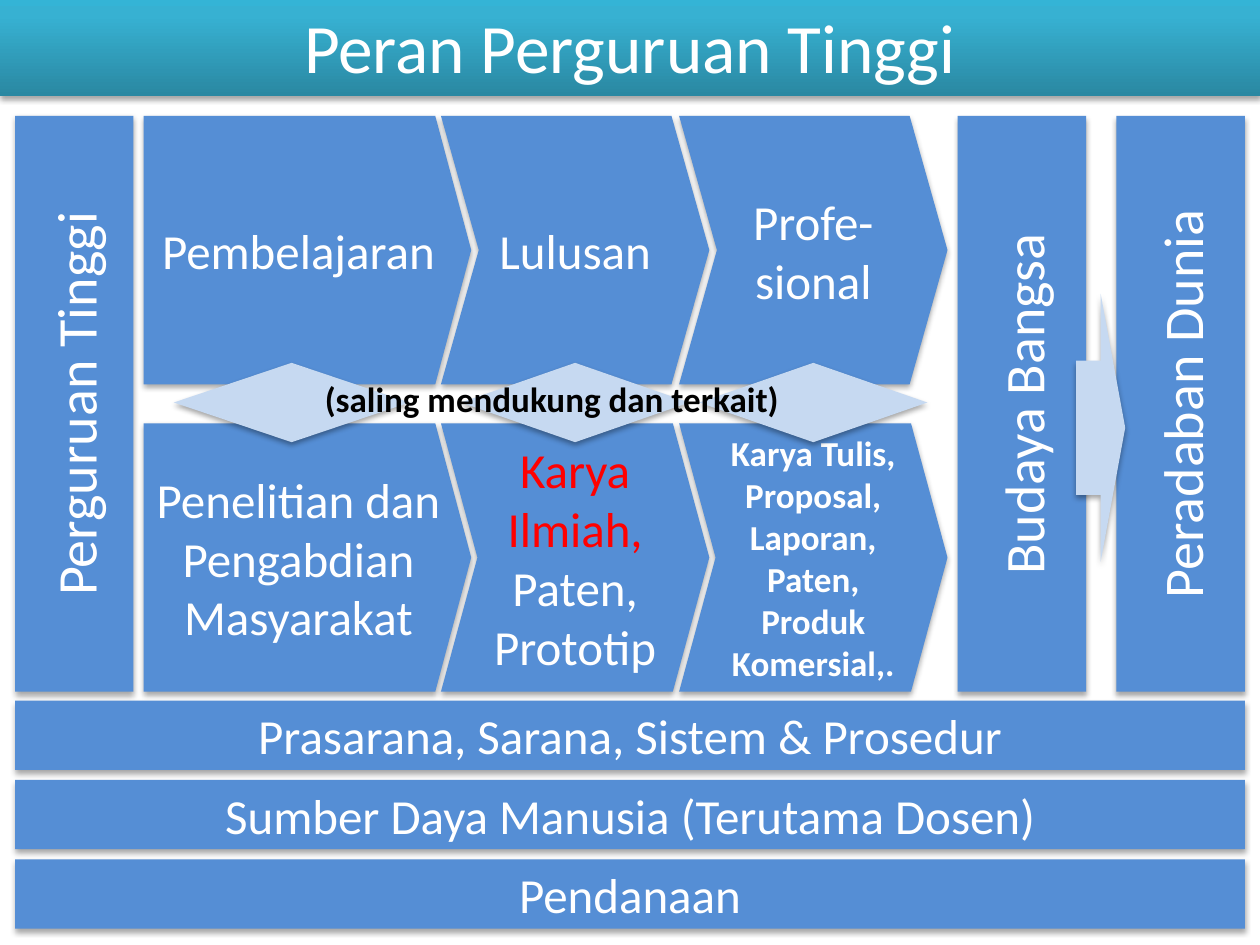
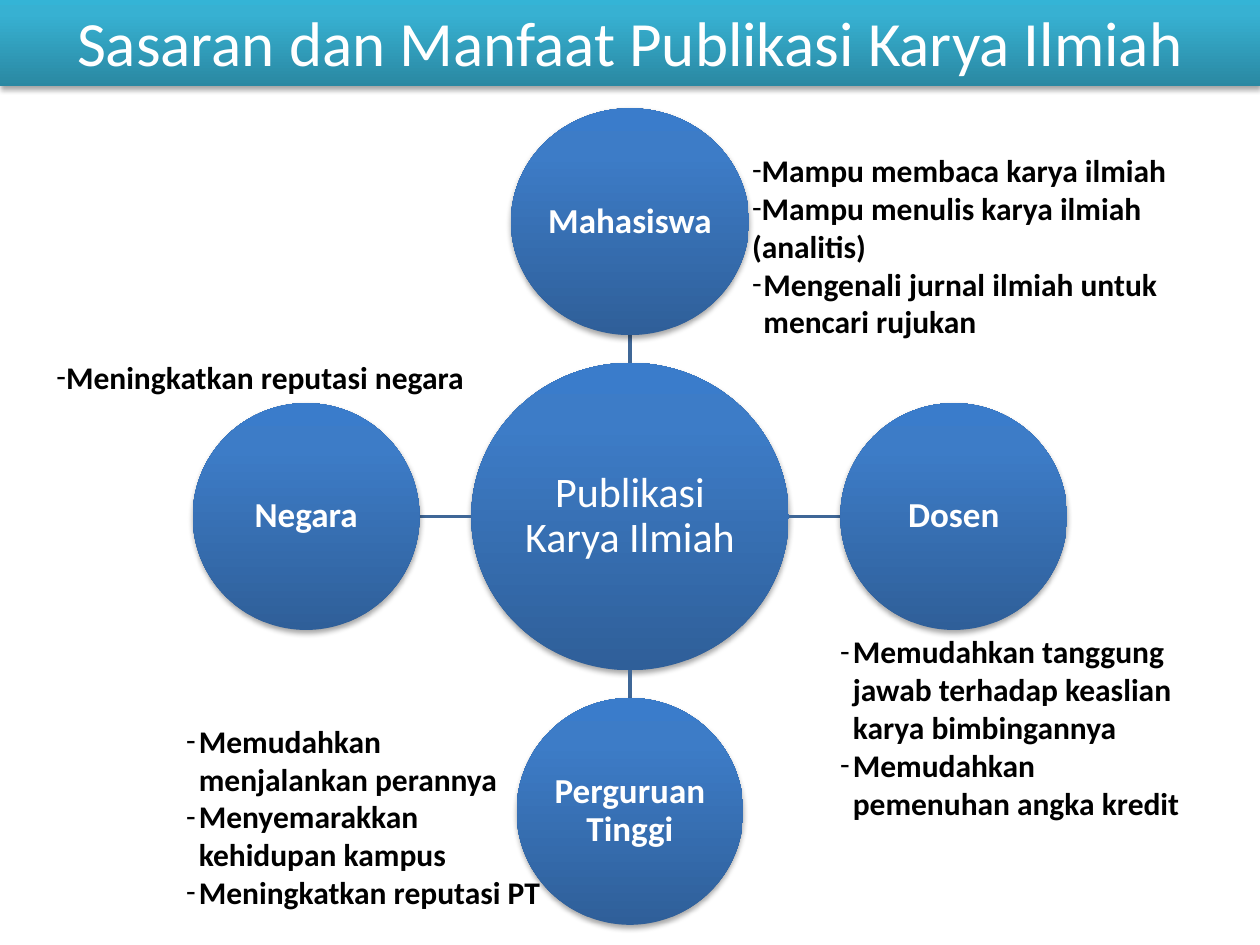
import copy

import lxml.etree
import pptx
import pptx.dml.color
import pptx.enum.shapes
import pptx.enum.text
import pptx.oxml
import pptx.oxml.ns
import pptx.util

Inches = pptx.util.Inches
Pt = pptx.util.Pt
RGBColor = pptx.dml.color.RGBColor
SHAPE = pptx.enum.shapes.MSO_SHAPE
ALIGN = pptx.enum.text.PP_ALIGN
ANCHOR = pptx.enum.text.MSO_ANCHOR
qn = pptx.oxml.ns.qn

WHITE = RGBColor(0xFF, 0xFF, 0xFF)
BLACK = RGBColor(0x00, 0x00, 0x00)
RED = RGBColor(0xFF, 0x00, 0x00)
BLOCK = RGBColor(0x55, 0x8E, 0xD5)
ARROW = RGBColor(0xC6, 0xD9, 0xF1)
SPOKE = RGBColor(0x3F, 0x67, 0x97)
TITLE_GRADIENT = [RGBColor(0x2A, 0x88, 0xA2), RGBColor(0x37, 0xB1, 0xD2), RGBColor(0x34, 0xB4, 0xD6)]
CIRCLE_GRADIENT = [RGBColor(0x2F, 0x5F, 0x99), RGBColor(0x3D, 0x7C, 0xC7), RGBColor(0x3A, 0x7C, 0xCB)]
FONT = "Calibri"
SHADOW = (
    '<a:effectLst xmlns:a="http://schemas.openxmlformats.org/drawingml/2006/main">'
    '<a:outerShdw blurRad="40000" dist="23000" dir="5400000" rotWithShape="0">'
    '<a:srgbClr val="000000"><a:alpha val="35000"/></a:srgbClr>'
    '</a:outerShdw></a:effectLst>'
)


def write(sp, *lines, size=28, color=WHITE, bold=False, align=ALIGN.CENTER, anchor=ANCHOR.MIDDLE,
          lead="", spacing=None, inset=None, vertical=False, wrap=True, hangs=()):
    tf = sp.text_frame
    tf.word_wrap = wrap
    tf.vertical_anchor = anchor
    if inset is not None:
        tf.margin_left = tf.margin_right = tf.margin_top = tf.margin_bottom = Inches(inset)
    if vertical:
        sp._element.txBody.bodyPr.set("vert", "vert270")
    for i, line in enumerate(lines):
        p = tf.paragraphs[0] if i == 0 else tf.add_paragraph()
        p.alignment = align
        if spacing:
            p.line_spacing = spacing
        for part, part_color in ((lead, RED), (line, color)):
            if part:
                r = p.add_run()
                r.text = part
                r.font.name = FONT
                r.font.size = Pt(size)
                r.font.bold = bold
                r.font.color.rgb = part_color
        if hangs:
            pPr = p._p.get_or_add_pPr()
            pPr.set("marL", str(Inches(hangs[i])))
            pPr.set("indent", str(-Inches(hangs[i])))
            lxml.etree.SubElement(pPr, qn("a:buFont")).set("typeface", FONT)
            lxml.etree.SubElement(pPr, qn("a:buChar")).set("char", "-")


def add_block(s, kind, x, y, w, h, fill=BLOCK, adj=()):
    sp = s.shapes.add_shape(kind, Inches(x), Inches(y), Inches(w), Inches(h))
    for i, value in enumerate(adj):
        sp.adjustments[i] = value
    if isinstance(fill, list):
        sp.fill.gradient()
        sp.fill.gradient_angle = 90
        last = sp._element.spPr.findall(".//" + qn("a:gs"))[-1]
        last.addnext(copy.deepcopy(last))
        for stop, color, position in zip(sp.fill.gradient_stops, fill, (0, 0.8, 1)):
            stop.color.rgb = color
            stop.position = position
    else:
        sp.fill.solid()
        sp.fill.fore_color.rgb = fill
    sp.line.fill.background()
    sp._element.spPr.append(pptx.oxml.parse_xml(SHADOW))
    return sp


prs = pptx.Presentation()
prs.slide_width = Inches(10)
prs.slide_height = Inches(7.5)

slides = []
for title, size, height in (
    ("Peran Perguruan Tinggi", 39.6, 0.79),
    ("Sasaran dan Manfaat Publikasi Karya Ilmiah", 36, 0.71),
):
    s = prs.slides.add_slide(prs.slide_layouts[6])
    sp = add_block(s, SHAPE.RECTANGLE, 0, -0.03, 10, height, TITLE_GRADIENT)
    write(sp, title, size=size)
    slides.append(s)
roles, benefits = slides

LEFT, TOP, ROW_H = 0.12, 0.92, 2.13
ROW_STEP = 2.44

for x, w, label in (
    (LEFT, 0.94, "Perguruan Tinggi"),
    (7.6, 1.02, "Budaya Bangsa"),
    (8.86, 1.02, "Peradaban Dunia"),
):
    sp = add_block(roles, SHAPE.RECTANGLE, x, TOP, w, ROW_STEP + ROW_H)
    write(sp, label, size=32, vertical=True)

columns = ((SHAPE.PENTAGON, 1.14, 2.6), (SHAPE.CHEVRON, 3.5, 2.13), (SHAPE.CHEVRON, 5.39, 2.13))
rows = (
    (0.141, (("Pembelajaran", {}), ("Lulusan", {}), ("Profe-sional", {}))),
    (0.136, (
        ("Penelitian dan Pengabdian Masyarakat", {}),
        ("Paten, Prototip", {"lead": "Karya Ilmiah, "}),
        ("Karya Tulis, Proposal, Laporan, Paten, Produk Komersial,.", {"size": 20, "bold": True}),
    )),
)
for row, (notch, cells) in enumerate(rows):
    for (kind, x, w), (label, style) in zip(columns, cells):
        adj = 0.134 if kind == SHAPE.PENTAGON else notch
        sp = add_block(roles, kind, x, TOP + row * ROW_STEP, w, ROW_H, adj=[adj])
        write(sp, label, **style)

for i, label in enumerate((
    "Prasarana, Sarana, Sistem & Prosedur",
    "Sumber Daya Manusia (Terutama Dosen)",
    "Pendanaan",
)):
    write(add_block(roles, SHAPE.RECTANGLE, LEFT, 5.56 + i * 0.63, 9.76, 0.55), label)

for x, w in ((1.38, 1.87), (3.66, 1.81), (5.55, 1.81)):
    add_block(roles, SHAPE.UP_DOWN_ARROW, x, 2.88, w, 0.63, ARROW, [0.5, 0.203])
add_block(roles, SHAPE.RIGHT_ARROW, 8.54, 2.33, 0.39, ROW_H, ARROW)

sp = roles.shapes.add_textbox(Inches(2.48), Inches(2.95), Inches(3.84), Inches(0.44))
write(sp, "(saling mendukung dan terkait)", size=20, color=BLACK, bold=True,
      align=ALIGN.LEFT, anchor=ANCHOR.TOP, wrap=False)

CX, CY = 5, 4.1
HUB_W, HUB_H = 2.52, 2.44
sp = add_block(benefits, SHAPE.OVAL, CX - HUB_W / 2, CY - HUB_H / 2, HUB_W, HUB_H, CIRCLE_GRADIENT)
write(sp, "Publikasi Karya Ilmiah", size=24, spacing=0.9, inset=0.02)

SAT = 1.8
for label, dx, dy, distance, w in (
    ("Mahasiswa", 0, -1, 2.34, 1.89),
    ("Dosen", 1, 0, 2.57, SAT),
    ("Perguruan Tinggi", 0, 1, 2.34, SAT),
    ("Negara", -1, 0, 2.57, SAT),
):
    x, y = CX + dx * distance, CY + dy * distance
    line = benefits.shapes.add_connector(
        pptx.enum.shapes.MSO_CONNECTOR.STRAIGHT,
        Inches(CX + dx * HUB_W / 2), Inches(CY + dy * HUB_H / 2),
        Inches(x - dx * w / 2), Inches(y - dy * SAT / 2))
    line.line.color.rgb = SPOKE
    line.line.width = Pt(2)
    lxml.etree.SubElement(line._element.spPr, qn("a:effectLst"))
    sp = add_block(benefits, SHAPE.OVAL, x - w / 2, y - SAT / 2, w, SAT, CIRCLE_GRADIENT)
    write(sp, label, size=20, bold=True, spacing=0.9, inset=0.01)

for x, y, w, h, wrap, hangs, lines in (
    (5.87, 1.15, 4.25, 1.31, True, (0, 0, 0.09), (
        "Mampu membaca karya ilmiah",
        "Mampu menulis karya ilmiah (analitis)",
        "Mengenali jurnal ilmiah untuk mencari rujukan")),
    (6.57, 4.97, 2.91, 1.62, True, (0.1, 0.1), (
        "Memudahkan tanggung jawab terhadap keaslian karya bimbingannya",
        "Memudahkan pemenuhan angka kredit")),
    (1.38, 5.68, 3.07, 1.62, True, (0.1, 0.1, 0.1), (
        "Memudahkan menjalankan perannya",
        "Menyemarakkan kehidupan kampus",
        "Meningkatkan reputasi PT")),
    (0.35, 2.79, 3.46, 0.4, False, (0,), ("Meningkatkan reputasi negara",)),
):
    sp = benefits.shapes.add_textbox(Inches(x), Inches(y), Inches(w), Inches(h))
    write(sp, *lines, size=18, color=BLACK, bold=True, align=ALIGN.LEFT,
          anchor=ANCHOR.TOP, wrap=wrap, hangs=hangs)

prs.save("out.pptx")
